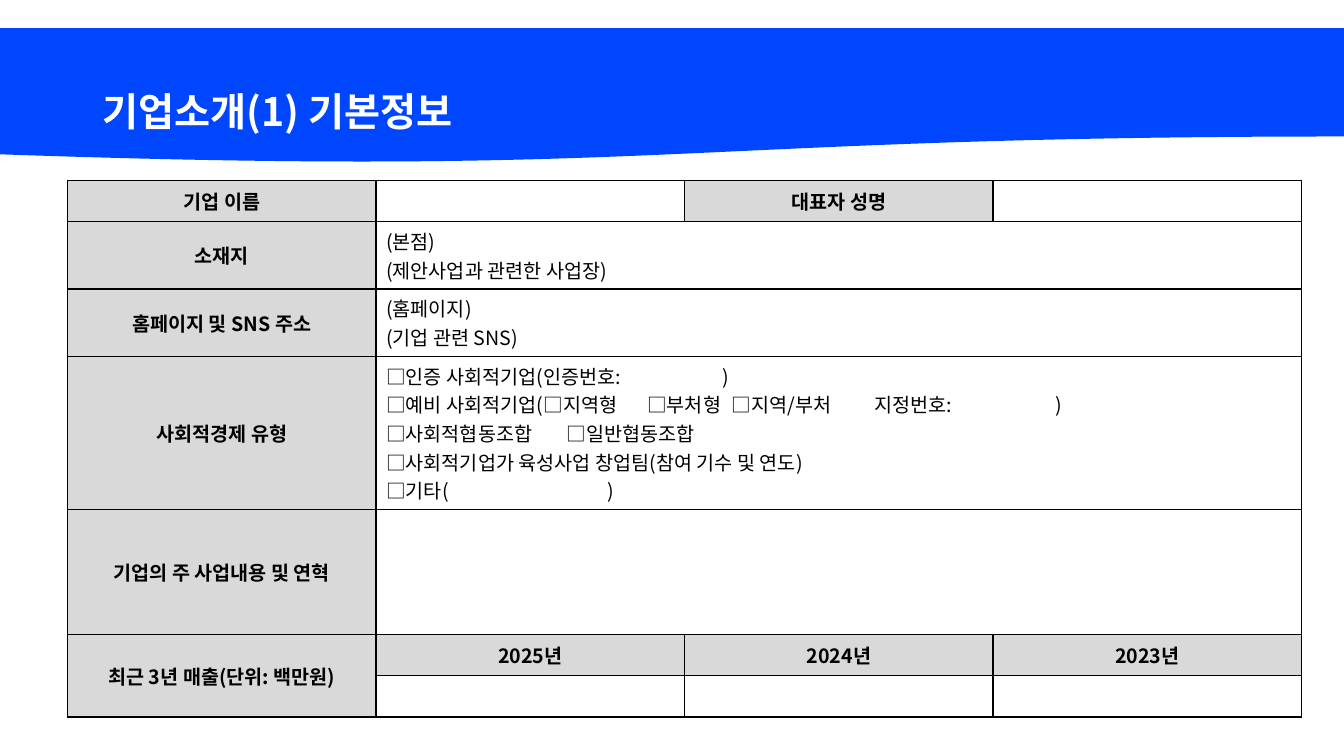
import dataclasses

import pptx
import pptx.dml.color
import pptx.enum.shapes
import pptx.enum.text
import pptx.oxml
import pptx.oxml.ns
import pptx.util
from pptx.util import Inches

ALIGN = pptx.enum.text.PP_ALIGN
MIDDLE = pptx.enum.text.MSO_ANCHOR.MIDDLE


@dataclasses.dataclass(frozen=True)
class Theme:
    font: str = "Noto Sans CJK KR"
    banner: str = "0046FF"
    label: str = "D9D9D9"
    white: str = "FFFFFF"
    ink: str = "000000"
    title_size: int = 28
    body_size: int = 14
    border_width: int = 1


THEME = Theme()
COLUMN_WIDTH = 3.06
ROW_HEIGHTS = [0.41, 0.66, 0.66, 1.52, 1.24, 0.41, 0.41]

# (row, column, text)
LABELS = [
    (0, 0, "기업 이름"),
    (0, 2, "대표자 성명"),
    (1, 0, "소재지"),
    (2, 0, "홈페이지 및 SNS 주소"),
    (3, 0, "사회적경제 유형"),
    (4, 0, "기업의 주 사업내용 및 연혁"),
    (5, 0, "최근 3년 매출(단위: 백만원)"),
    (5, 1, "2025년"),
    (5, 2, "2024년"),
    (5, 3, "2023년"),
]

# Row: lines of (text, tab stops in inches); "_" is a blank ruled up to the next stop.
ENTRIES = {
    1: [("(본점)", []), ("(제안사업과 관련한 사업장)", [])],
    2: [("(홈페이지)", []), ("(기업 관련 SNS)", [])],
    3: [
        ("□인증 사회적기업(인증번호:_)", [3.34]),
        ("□예비 사회적기업(□지역형\t□부처형\t□지역/부처\t지정번호: _ )",
         [2.59, 3.43, 4.84, 6.6]),
        ("□사회적협동조합\t□일반협동조합", [1.79]),
        ("□사회적기업가 육성사업 창업팀(참여 기수 및 연도)", []),
        ("□기타(_)", [2.2]),
    ],
}


def xml_element(tag, content="", attributes=""):
    namespace = pptx.oxml.ns.nsdecls("a")
    return pptx.oxml.parse_xml(f"<a:{tag} {namespace} {attributes}>{content}</a:{tag}>")


def set_fill(target, color):
    target.fill.solid()
    target.fill.fore_color.rgb = pptx.dml.color.RGBColor.from_string(color)


def add_text(paragraph, text, *, size=THEME.body_size, color=THEME.ink,
             bold=False, align=ALIGN.LEFT, tabs=()):
    """Write text with its format, turning each "_" into an underlined tab."""
    paragraph.alignment = align
    if tabs:
        stops = "".join(f'<a:tab pos="{Inches(stop)}" algn="l"/>' for stop in tabs)
        paragraph._p.get_or_add_pPr().append(xml_element("tabLst", stops))
    for index, piece in enumerate(text.split("_")):
        for content, underline in [("\t", True)] * (index > 0) + [(piece, False)]:
            run = paragraph.add_run()
            run.text = content
            font = run.font
            font.name = THEME.font
            font.size = pptx.util.Pt(size)
            font.bold = bold
            font.underline = underline
            font.color.rgb = pptx.dml.color.RGBColor.from_string(color)
            run._r.get_or_add_rPr().find(pptx.oxml.ns.qn("a:latin")).addnext(
                xml_element("ea", attributes=f'typeface="{THEME.font}"'))


def add_banner(slide):
    banner = slide.shapes.add_shape(
        pptx.enum.shapes.MSO_SHAPE.FLOWCHART_DOCUMENT,
        Inches(0), Inches(0.28), Inches(13.33), Inches(1.34))
    banner.shadow.inherit = False
    set_fill(banner, THEME.banner)
    banner.line.fill.background()
    # The banner lies behind the title placeholder.
    slide.shapes._spTree.insert(2, banner._element)


def format_title(slide, text):
    title = slide.shapes.title
    title.left, title.top = Inches(0.92), Inches(0.4)
    title.width, title.height = Inches(11.5), Inches(1.45)
    title.text_frame.vertical_anchor = MIDDLE
    paragraph = title.text_frame.paragraphs[0]
    paragraph.line_spacing = 0.9
    add_text(paragraph, text, size=THEME.title_size, color=THEME.white, bold=True)


def format_cell(cell):
    """Give an empty cell its fill, borders and type size."""
    cell.vertical_anchor = MIDDLE
    properties = cell._tc.get_or_add_tcPr()
    width = pptx.util.Pt(THEME.border_width)
    line = f'<a:solidFill><a:srgbClr val="{THEME.ink}"/></a:solidFill>'
    for side in ("lnL", "lnR", "lnT", "lnB"):
        properties.append(xml_element(side, line, f'w="{width}"'))
    set_fill(cell, THEME.white)
    cell.text_frame.paragraphs[0]._p.append(
        xml_element("endParaRPr", attributes=f'sz="{THEME.body_size * 100}"'))


def add_company_table(slide):
    column_count = 4
    frame = slide.shapes.add_table(
        len(ROW_HEIGHTS), column_count, Inches(0.67), Inches(1.79),
        Inches(COLUMN_WIDTH * column_count), Inches(sum(ROW_HEIGHTS)))
    table = frame.table
    table.first_row = table.horz_banding = False
    for column in table.columns:
        column.width = Inches(COLUMN_WIDTH)
    for row, height in zip(table.rows, ROW_HEIGHTS):
        row.height = Inches(height)
    for cell in table.iter_cells():
        format_cell(cell)
    for row in range(1, 5):
        table.cell(row, 1).merge(table.cell(row, 3))
    table.cell(5, 0).merge(table.cell(6, 0))

    for row, column, text in LABELS:
        cell = table.cell(row, column)
        set_fill(cell, THEME.label)
        add_text(cell.text_frame.paragraphs[0], text, bold=True, align=ALIGN.CENTER)
    for row, lines in ENTRIES.items():
        text_frame = table.cell(row, 1).text_frame
        for index, (text, tabs) in enumerate(lines):
            paragraph = text_frame.add_paragraph() if index else text_frame.paragraphs[0]
            add_text(paragraph, text, tabs=tabs)


def main():
    presentation = pptx.Presentation()
    presentation.slide_width = Inches(13.33)
    presentation.slide_height = Inches(7.5)
    slide = presentation.slides.add_slide(presentation.slide_layouts[5])
    add_banner(slide)
    format_title(slide, "기업소개(1) 기본정보")
    add_company_table(slide)
    presentation.save("out.pptx")


if __name__ == "__main__":
    main()
